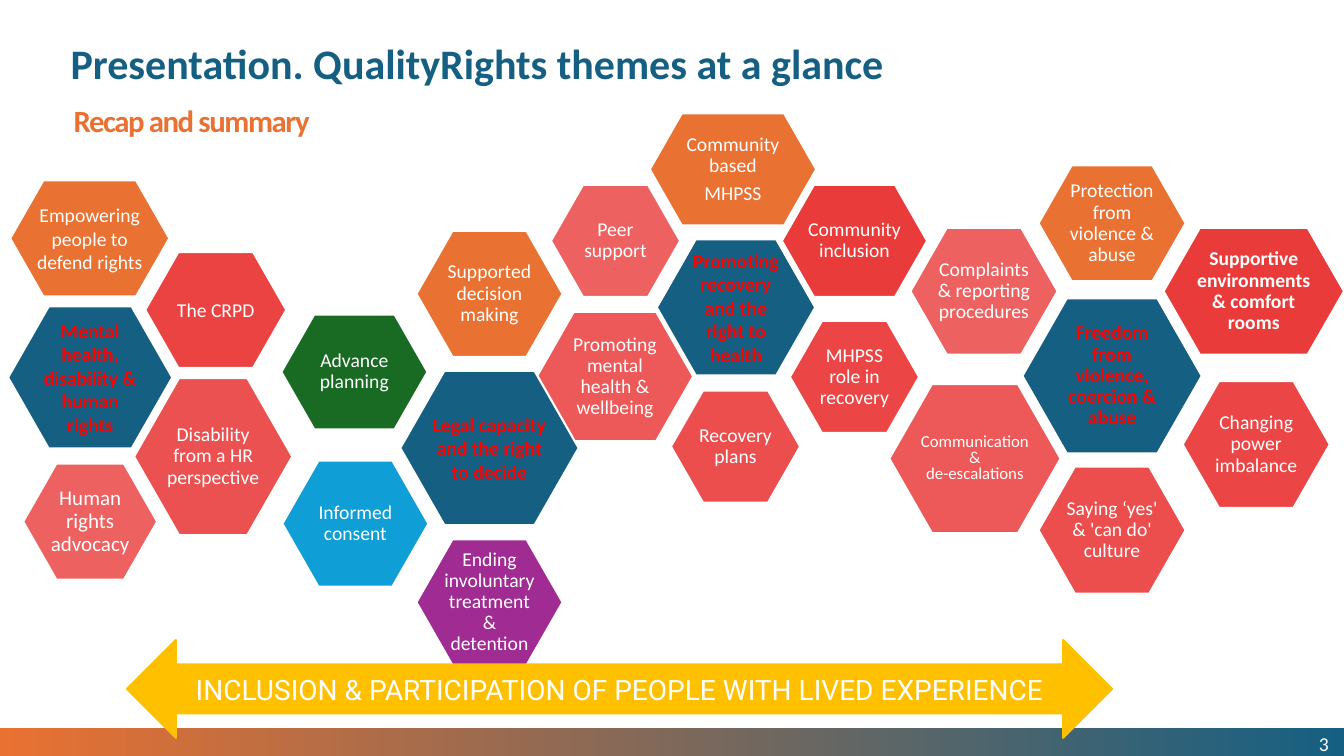
"""Build the QualityRights themes slide with its clusters of hexagons."""
import pptx
import pptx.dml.color
import pptx.enum.shapes
import pptx.enum.text
import pptx.util

Inches = pptx.util.Inches
Pt = pptx.util.Pt
RGBColor = pptx.dml.color.RGBColor
MSO_SHAPE = pptx.enum.shapes.MSO_SHAPE
PP_ALIGN = pptx.enum.text.PP_ALIGN
MSO_ANCHOR = pptx.enum.text.MSO_ANCHOR

WHITE = RGBColor(0xFF, 0xFF, 0xFF)
RED = RGBColor(0xFF, 0x00, 0x00)
BLUE = RGBColor(0x15, 0x60, 0x82)
ORANGE = RGBColor(0xE9, 0x71, 0x32)
GOLD = RGBColor(0xFF, 0xC0, 0x00)
GREEN = RGBColor(0x19, 0x6B, 0x24)
SKY = RGBColor(0x0F, 0x9E, 0xD5)
PURPLE = RGBColor(0xA0, 0x2B, 0x93)
CORAL_1 = RGBColor(0xEA, 0x3B, 0x3B)
CORAL_2 = RGBColor(0xEB, 0x42, 0x42)
CORAL_3 = RGBColor(0xEB, 0x45, 0x45)
CORAL_4 = RGBColor(0xEC, 0x4E, 0x4E)
CORAL_5 = RGBColor(0xEC, 0x51, 0x51)
CORAL_6 = RGBColor(0xED, 0x58, 0x58)
CORAL_7 = RGBColor(0xEE, 0x61, 0x61)

CORE = {"bold": True, "color": RED, "spacing": 1.0}
RECOVERY = [
    ("Promoting recovery and the right to health", 6.51, 2.37, 1.58, 1.36, BLUE, CORE),
    ("Community based\nMHPSS", 6.44, 1.12, 1.66, 1.12, ORANGE, {"after": 5}),
    ("Community inclusion", 7.75, 1.83, 1.45, 1.12, CORAL_1, {}),
    ("MHPSS role in recovery", 7.83, 3.18, 1.29, 1.12, CORAL_3, {}),
    ("Recovery plans", 6.65, 3.87, 1.29, 1.12, CORAL_4, {}),
    ("Promoting mental health & wellbeing", 5.32, 3.09, 1.56, 1.29, CORAL_6, {}),
    ("Peer support", 5.46, 1.83, 1.29, 1.12, CORAL_7, {}),
]
HUMAN_RIGHTS = [
    ("Mental health, disability & human rights", 0.08, 3.04, 1.63, 1.41, BLUE, CORE),
    ("Empowering people to defend rights", 0.1, 1.79, 1.58, 1.15, ORANGE, {"spacing": 1.0}),
    ("The CRPD", 1.44, 2.5, 1.4, 1.15, CORAL_2, {"spacing": 1.0}),
    ("Disability from a HR perspective", 1.33, 3.75, 1.57, 1.56, CORAL_5, {}),
    ("Human rights advocacy", 0.23, 4.6, 1.33, 1.15, CORAL_7, {"size": 15}),
]
LEGAL_CAPACITY = [
    ("Legal capacity and the right to decide", 3.97, 3.68, 1.77, 1.53, BLUE, CORE),
    ("Supported decision making", 4.13, 2.29, 1.45, 1.25, ORANGE, {}),
    ("Advance planning", 2.79, 3.12, 1.45, 1.14, GREEN, {}),
    ("Informed consent", 2.8, 4.57, 1.45, 1.25, SKY, {}),
    ("Ending involuntary treatment & detention", 4.13, 5.35, 1.45, 1.25, PURPLE, {}),
]
FREEDOM = [
    ("Freedom from violence, coercion & abuse", 10.14, 2.96, 1.78, 1.54, BLUE,
     {"bold": True, "color": RED}),
    ("Protection from violence & abuse", 10.3, 1.64, 1.46, 1.15, ORANGE, {}),
    ("Supportive environments & comfort rooms", 11.54, 2.26, 1.79, 1.26, CORAL_1, {"bold": True}),
    ("Changing power imbalance", 11.73, 3.78, 1.46, 1.26, CORAL_3, {}),
    ("Saying ‘yes' & 'can do' culture", 10.3, 4.63, 1.46, 1.26, CORAL_4, {}),
    ("Communication\n&\nde-escalations", 8.82, 3.81, 1.7, 1.48, CORAL_6,
     {"size": 12, "spacing": 0.8}),
    ("Complaints & reporting procedures", 9.03, 2.26, 1.46, 1.26, CORAL_7, {}),
]


class Deck:
    """Hold the text style and the current slide, and draw its elements."""

    style = {"name": "Calibri", "size": 14, "bold": False, "color": WHITE,
             "align": PP_ALIGN.CENTER, "anchor": MSO_ANCHOR.MIDDLE,
             "spacing": 0.9, "after": 0, "inset": 0.02}

    def __init__(self, prs):
        """Add a title-only slide to the presentation."""
        self.slide = prs.slides.add_slide(prs.slide_layouts[5])

    def set_text(self, sp, text, **changes):
        """Fill a shape with formatted paragraphs."""
        fmt = {**self.style, **changes}
        tf = sp.text_frame
        frame = {"word_wrap": True, "vertical_anchor": fmt["anchor"],
                 "auto_size": pptx.enum.text.MSO_AUTO_SIZE.NONE}
        for side in ("left", "top", "right", "bottom"):
            frame["margin_" + side] = Inches(fmt["inset"])
        for key, value in frame.items():
            setattr(tf, key, value)
        for i, line in enumerate(text.split("\n")):
            p = tf.add_paragraph() if i else tf.paragraphs[0]
            para = {"alignment": fmt["align"], "line_spacing": fmt["spacing"],
                    "space_before": Pt(0), "space_after": Pt(fmt["after"])}
            for key, value in para.items():
                setattr(p, key, value)
            r = p.add_run()
            r.text = line
            font = {"name": fmt["name"], "size": Pt(fmt["size"]), "bold": fmt["bold"]}
            for key, value in font.items():
                setattr(r.font, key, value)
            r.font.color.rgb = fmt["color"]
        return sp

    def title(self, text, x, y, w, h, **changes):
        """Place and fill the title placeholder."""
        sp = self.slide.shapes.title
        box = {"left": x, "top": y, "width": w, "height": h}
        for key, value in box.items():
            setattr(sp, key, Inches(value))
        return self.set_text(sp, text, **changes)

    def label(self, text, x, y, w, h, **changes):
        """Add a text box."""
        sp = self.slide.shapes.add_textbox(Inches(x), Inches(y), Inches(w), Inches(h))
        return self.set_text(sp, text, **changes)

    def shape(self, kind, x, y, w, h, fill=None, line=None, width=1.5):
        """Add a preset shape without shadow."""
        sp = self.slide.shapes.add_shape(kind, Inches(x), Inches(y), Inches(w), Inches(h))
        sp.shadow.inherit = False
        if fill is not None:
            sp.fill.solid()
            sp.fill.fore_color.rgb = fill
        if line is None:
            sp.line.fill.background()
        else:
            sp.line.color.rgb = line
            sp.line.width = Pt(width)
        return sp

    def footer(self, x, y, w, h, colors):
        """Add the gradient bar."""
        sp = self.shape(MSO_SHAPE.RECTANGLE, x, y, w, h)
        sp.fill.gradient()
        sp.fill.gradient_angle = 0
        for stop, color in zip(sp.fill.gradient_stops, colors):
            stop.color.rgb = color

    def cluster(self, hexagons, width=1.5):
        """Add a theme's hexagons with their texts."""
        for text, x, y, w, h, fill, changes in hexagons:
            sp = self.shape(MSO_SHAPE.HEXAGON, x, y, w, h, fill, WHITE, width)
            sp.adjustments[0] = 0.286
            self.set_text(sp, text, **changes)


def main():
    """Build and save the slide."""
    prs = pptx.Presentation()
    prs.slide_width, prs.slide_height = Inches(13.33), Inches(7.5)
    deck = Deck(prs)
    left = {"align": PP_ALIGN.LEFT, "bold": True}
    deck.title("Presentation. QualityRights themes at a glance", 0.6, 0.42, 10.71, 0.47,
               size=30, color=BLUE, inset=0.1, **left)
    deck.footer(0, 7.22, 13.33, 0.28, (ORANGE, BLUE))
    deck.label("3", 11.38, 7.26, 1.8, 0.24, align=PP_ALIGN.RIGHT, spacing=1.0, inset=0)
    sp = deck.label("Recap and summary", 0.73, 0.99, 4.29, 0.39, size=22, color=ORANGE,
                    anchor=MSO_ANCHOR.BOTTOM, spacing=Pt(33), inset=0, **left)
    sp.text_frame.paragraphs[0].runs[0].font._element.set("spc", "-100")
    deck.cluster(RECOVERY, width=2)
    for theme in (HUMAN_RIGHTS, LEGAL_CAPACITY, FREEDOM):
        deck.cluster(theme)
    arrow = deck.shape(MSO_SHAPE.LEFT_RIGHT_ARROW, 1.26, 6.35, 9.77, 0.97, GOLD, GOLD)
    deck.set_text(arrow, "INCLUSION & PARTICIPATION OF PEOPLE WITH LIVED EXPERIENCE",
                  name="Roboto", size=20, spacing=1.0, inset=0.05)
    prs.save("out.pptx")


if __name__ == "__main__":
    main()
